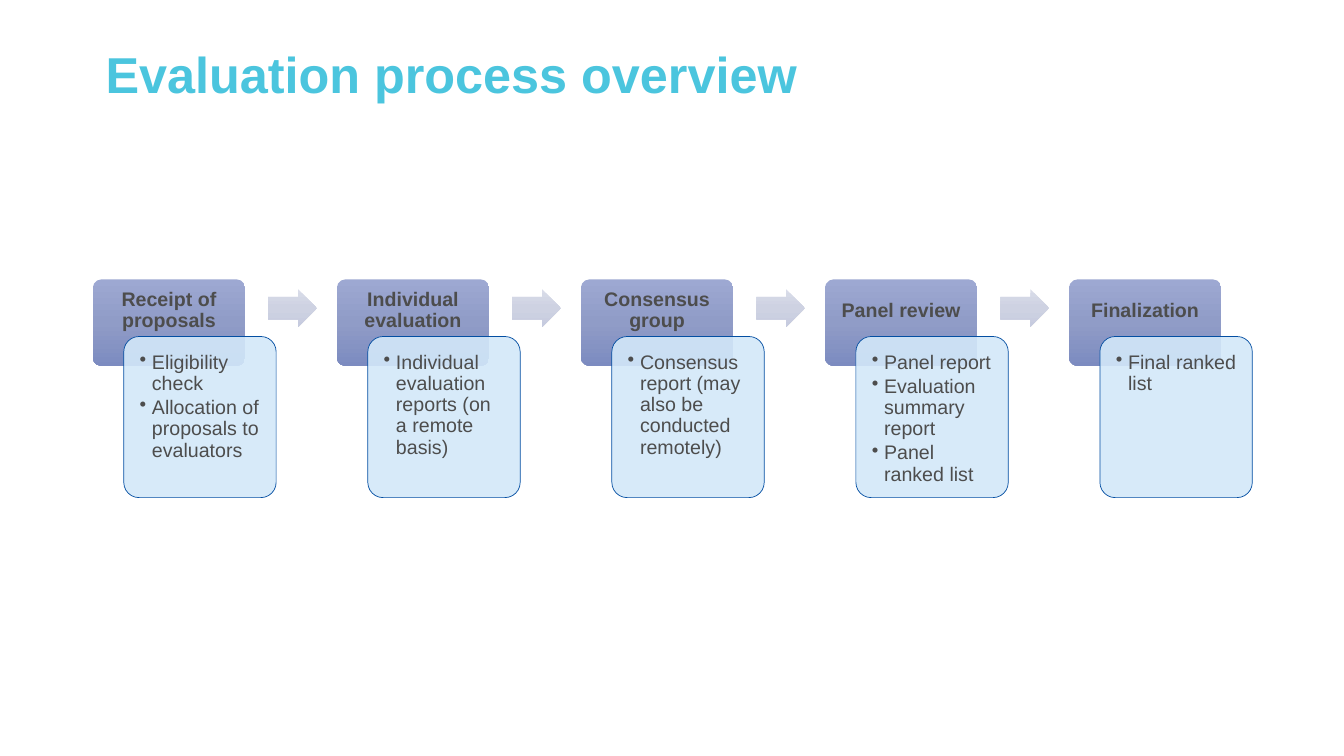
from copy import deepcopy

from lxml import etree
from pptx import Presentation
from pptx.dml.color import RGBColor
from pptx.enum.shapes import MSO_SHAPE
from pptx.enum.text import MSO_ANCHOR, PP_ALIGN
from pptx.oxml.ns import qn
from pptx.util import Cm, Pt

ROUNDED, ARROW = MSO_SHAPE.ROUNDED_RECTANGLE, MSO_SHAPE.RIGHT_ARROW
TOP, MIDDLE = MSO_ANCHOR.TOP, MSO_ANCHOR.MIDDLE
LEFT, CENTER = PP_ALIGN.LEFT, PP_ALIGN.CENTER

# Content
TITLE = "Evaluation process overview"
STAGES = [
    ("Receipt of proposals", ["Eligibility check", "Allocation of proposals to evaluators"]),
    ("Individual evaluation", ["Individual evaluation reports (on a remote basis)"]),
    ("Consensus group", ["Consensus report (may also be conducted remotely)"]),
    ("Panel review", ["Panel report", "Evaluation summary report", "Panel ranked list"]),
    ("Finalization", ["Final ranked list"]),
]

# Colours
TITLE_COLOUR, TEXT_COLOUR = "4BC5DE", "4D4D4D"
CARD_FILL, CARD_LINE = "D3E8F9", "034EA2"
HEADER_GRADIENT = ["9DA8D2", "909CC7", "7C8BC0"]
ARROW_GRADIENT = ["D9DCE9", "CED2E2", "C6CBDF"]

# Layout in centimetres
FIRST_LEFT, PITCH = 2.34, 6.15
HEADER_TOP, HEADER_HEIGHT, LABEL_HEIGHT = 7.04, 2.18, 1.45
STAGE_WIDTH = 3.84
CARD_SHIFT, CARD_TOP, CARD_HEIGHT, CARD_INSET = 0.78, 8.48, 4.06, 0.12
ARROW_SHIFT, ARROW_TOP, ARROW_WIDTH, ARROW_HEIGHT = 4.42, 7.29, 1.23, 0.95
BULLET_INDENT = 0.31

# Text formats
HEADING = dict(size=Pt(36), bold=True, colour=TITLE_COLOUR)
LABEL = dict(size=Pt(14), bold=True, colour=TEXT_COLOUR)
DETAIL = dict(size=Pt(14), bold=False, colour=TEXT_COLOUR)


def colour(hex_value):
    return RGBColor.from_string(hex_value)


def add_block(page, kind, area, adjustments):
    shape = page.shapes.add_shape(kind, *[Cm(length) for length in area])
    shape.shadow.inherit = False
    for index, value in enumerate(adjustments):
        shape.adjustments[index] = value
    shape.line.fill.background()
    return shape


def fill_gradient(shape, hex_values):
    """Fill from top to bottom with three evenly spaced colours."""
    shape.fill.gradient()
    shape.fill.gradient_angle = 270
    stop_list = shape._element.spPr.find(".//" + qn("a:gsLst"))
    stop_list.insert(1, deepcopy(stop_list[0]))
    for index, (stop, value) in enumerate(zip(shape.fill.gradient_stops, hex_values)):
        stop.position = index / 2
        stop.color.rgb = colour(value)


def add_bullet(para):
    properties = para._p.get_or_add_pPr()
    properties.set("marL", str(Cm(BULLET_INDENT)))
    properties.set("indent", str(-Cm(BULLET_INDENT)))
    etree.SubElement(properties, qn("a:buChar")).set("char", "•")


def add_text(page, area, lines, style, insets, anchor=TOP, align=LEFT, after=0, bullets=False):
    box = page.shapes.add_textbox(*[Cm(length) for length in area])
    frame = box.text_frame
    frame.word_wrap = True
    frame.vertical_anchor = anchor
    for side, inset in zip(("left", "top", "right", "bottom"), insets):
        setattr(frame, "margin_" + side, Cm(inset))
    for index, line in enumerate(lines):
        para = frame.add_paragraph() if index else frame.paragraphs[0]
        para_format = dict(alignment=align, line_spacing=0.9, space_after=Pt(after))
        for name, value in para_format.items():
            setattr(para, name, value)
        if bullets:
            para.level = 1
            add_bullet(para)
        span = para.add_run()
        span.text = line
        for name, value in dict(name="Arial", size=style["size"], bold=style["bold"]).items():
            setattr(span.font, name, value)
        span.font.color.rgb = colour(style["colour"])


def add_card(page, left, details):
    card = add_block(page, ROUNDED, (left, CARD_TOP, STAGE_WIDTH, CARD_HEIGHT), [0.1])
    card.fill.solid()
    card.fill.fore_color.rgb = colour(CARD_FILL)
    fill_colour = card._element.spPr.find(qn("a:solidFill"))[0]
    etree.SubElement(fill_colour, qn("a:alpha")).set("val", "90000")
    card.line.color.rgb = colour(CARD_LINE)
    card.line.width = Pt(0.5)
    text_area = (left + CARD_INSET, CARD_TOP + CARD_INSET,
                 STAGE_WIDTH - 2 * CARD_INSET, CARD_HEIGHT - 2 * CARD_INSET)
    add_text(page, text_area, details, DETAIL, [0.28] * 4, after=2.1, bullets=True)


def add_stage(page, left, label, details):
    header = add_block(page, ROUNDED, (left, HEADER_TOP, STAGE_WIDTH, HEADER_HEIGHT), [0.1])
    fill_gradient(header, HEADER_GRADIENT)
    add_text(page, (left, HEADER_TOP, STAGE_WIDTH, LABEL_HEIGHT), [label], LABEL,
             (0.28, 0.28, 0.28, 0.15), MIDDLE, CENTER, after=4.9)
    add_card(page, left + CARD_SHIFT, details)


def main():
    deck = Presentation()
    deck.slide_width, deck.slide_height = Cm(33.87), Cm(19.05)
    page = deck.slides.add_slide(deck.slide_layouts[6])

    # Title
    add_text(page, (2.41, 1.22, 29.21, 1.32), [TITLE], HEADING, (0.25, 0.13, 0.25, 0), MIDDLE)

    # Stages, with an arrow between neighbours
    for index, (label, details) in enumerate(STAGES):
        left = FIRST_LEFT + index * PITCH
        add_stage(page, left, label, details)
        if index < len(STAGES) - 1:
            arrow = add_block(page, ARROW, (left + ARROW_SHIFT, ARROW_TOP,
                                            ARROW_WIDTH, ARROW_HEIGHT), [0.6, 0.5])
            fill_gradient(arrow, ARROW_GRADIENT)

    deck.save("out.pptx")


if __name__ == "__main__":
    main()
